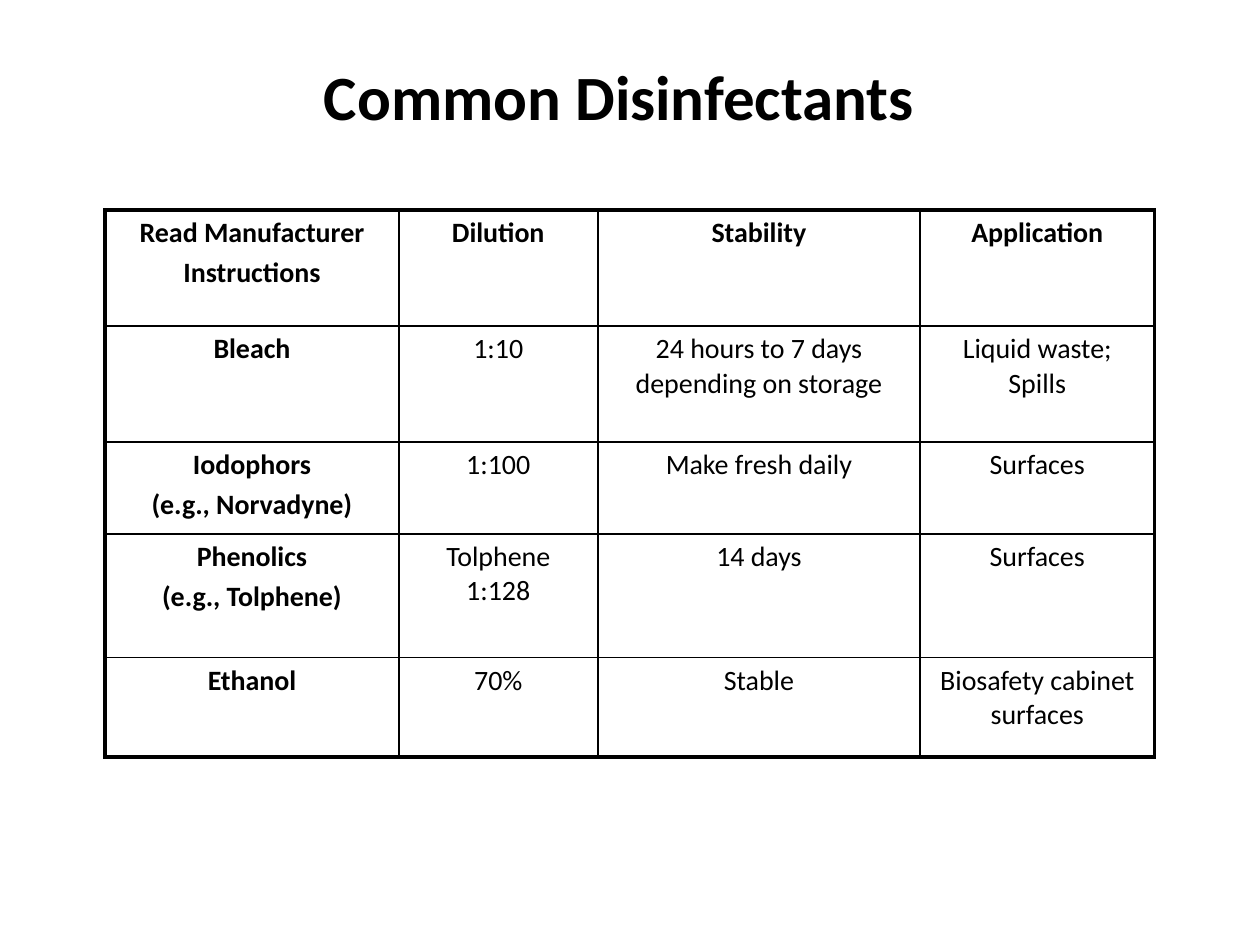
from pptx import Presentation
from pptx.dml.color import RGBColor
from pptx.enum.text import MSO_ANCHOR, PP_ALIGN
from pptx.oxml.ns import qn
from pptx.util import Cm, Pt
from lxml import etree

CENTER = PP_ALIGN.CENTER
MIDDLE = MSO_ANCHOR.MIDDLE
BLACK = RGBColor(0, 0, 0)
FONT = "Calibri"
THIN, THICK = Pt(1), Pt(2.25)

COLS = [5.92, 4.01, 6.5, 4.72]
ROWS = [2.34, 2.34, 1.85, 2.49, 2.01]
CELLS = [
    ["Read Manufacturer\nInstructions", "Dilution", "Stability", "Application"],
    ["Bleach", "1:10", "24 hours to 7 days depending on storage",
     "Liquid waste; Spills"],
    ["Iodophors\n(e.g., Norvadyne)", "1:100", "Make fresh daily", "Surfaces"],
    ["Phenolics\n(e.g., Tolphene)", "Tolphene 1:128", "14 days", "Surfaces"],
    ["Ethanol", "70%", "Stable", "Biosafety cabinet surfaces"],
]


def write(frame, text, size, bold, **para):
    """Fill a text frame with centred paragraphs, one for each line."""
    frame.word_wrap = True
    frame.text = text
    look = {"name": FONT, "size": Pt(size), "bold": bold}
    for par in frame.paragraphs:
        for key, val in {"alignment": CENTER, **para}.items():
            setattr(par, key, val)
        for run in par.runs:
            for key, val in look.items():
                setattr(run.font, key, val)
            run.font.color.rgb = BLACK


def border(cell, widths):
    """Draw the left, right, top and bottom lines of a cell."""
    props = cell._tc.get_or_add_tcPr()
    for side, width in zip("LRTB", widths):
        line = etree.SubElement(props, qn(f"a:ln{side}"), w=str(width))
        fill = etree.SubElement(line, qn("a:solidFill"))
        etree.SubElement(fill, qn("a:srgbClr"), val=str(BLACK))


def add_title(slide, left, top, width, height):
    box = slide.shapes.add_textbox(left, top, width, height)
    write(box.text_frame, "Common Disinfectants", 36, True, line_spacing=0.9)
    box.text_frame.vertical_anchor = MIDDLE


def add_grid(slide, left, top):
    last_row, last_col = len(ROWS) - 1, len(COLS) - 1
    table = slide.shapes.add_table(
        len(ROWS), len(COLS), left, top, Cm(sum(COLS)), Cm(sum(ROWS))).table
    table.horz_banding = False
    for col, width in zip(table.columns, COLS):
        col.width = Cm(width)
    for row, height in zip(table.rows, ROWS):
        row.height = Cm(height)

    # Bold header row and first column, thick outer frame
    for r, texts in enumerate(CELLS):
        for c, text in enumerate(texts):
            cell = table.cell(r, c)
            write(cell.text_frame, text, 16, r == 0 or c == 0,
                  space_before=Pt(3.2))
            outer = [c == 0, c == last_col, r == 0, r == last_row]
            border(cell, [THICK if edge else THIN for edge in outer])
            cell.fill.background()


def main():
    prs = Presentation()
    prs.slide_width, prs.slide_height = Cm(25.4), Cm(19.05)
    slide = prs.slides.add_slide(prs.slide_layouts[6])
    add_title(slide, Cm(1.9), Cm(0.43), Cm(21.16), Cm(3.18))
    add_grid(slide, Cm(2.12), Cm(4.23))
    prs.save("out.pptx")


if __name__ == "__main__":
    main()
